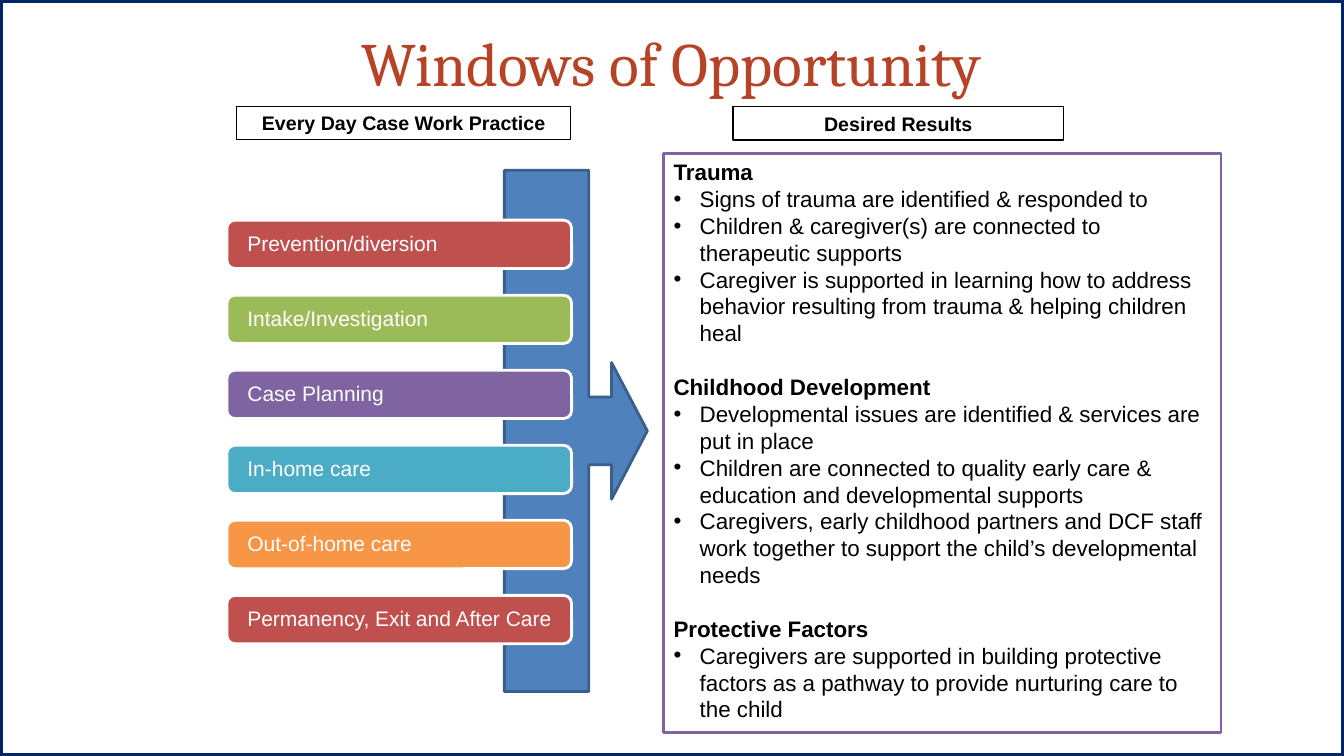
"""Build the Windows of Opportunity slide."""
from lxml import etree
from pptx import Presentation
from pptx import util as u
from pptx.dml.color import RGBColor
from pptx.enum import shapes, text
from pptx.oxml import ns

WIDTH, HEIGHT = 13.33, 7.5
COLOURS = {
    "frame": "002663", "title": "B64326", "black": "000000", "white": "FFFFFF",
    "arrow": "4F81BD", "arrow_edge": "3A5F8C", "red": "C0504D", "green": "9BBB59",
    "purple": "8064A2", "teal": "4BACC6", "orange": "F79646",
}
STAGES = [
    ("Prevention/diversion", "red"),
    ("Intake/Investigation", "green"),
    ("Case Planning", "purple"),
    ("In-home care", "teal"),
    ("Out-of-home care", "orange"),
    ("Permanency, Exit and After Care", "red"),
]
RESULTS = {
    "Trauma": [
        "Signs of trauma are identified & responded to",
        "Children & caregiver(s) are connected to therapeutic supports",
        "Caregiver is supported in learning how to address behavior resulting "
        "from trauma & helping children heal",
    ],
    "Childhood Development": [
        "Developmental issues are identified & services are put in place",
        "Children are connected to quality early care & education and "
        "developmental supports",
        "Caregivers, early childhood partners and DCF staff work together to "
        "support the child’s developmental needs",
    ],
    "Protective Factors": [
        "Caregivers are supported in building protective factors as a pathway "
        "to provide nurturing care to the child",
    ],
}


def colour(name):
    """Return the named colour."""
    return RGBColor.from_string(COLOURS[name])


def place(shape, box):
    """Move a shape to a left, top, width, height box in inches."""
    shape.left, shape.top, shape.width, shape.height = map(u.Inches, box)


def paint(shape, fill, line, weight):
    """Set the fill and outline of a shape; no fill name means hollow."""
    if fill:
        shape.fill.solid()
        shape.fill.fore_color.rgb = colour(fill)
    else:
        shape.fill.background()
    shape.line.color.rgb = colour(line)
    shape.line.width = u.Pt(weight)


def add_box(page, kind, box, fill, line, weight):
    """Add a flat preset shape."""
    shape = page.shapes.add_shape(kind, *map(u.Inches, box))
    shape.shadow.inherit = False
    paint(shape, fill, line, weight)
    return shape


def style(para, size, ink, bold=False, font="Arial", align=text.PP_ALIGN.LEFT):
    """Format a whole paragraph."""
    para.alignment = align
    para.font.size = u.Pt(size)
    para.font.name = font
    para.font.bold = bold
    para.font.color.rgb = colour(ink)


def add_title(page, box):
    """Place the slide title."""
    title = page.shapes.title
    place(title, box)
    title.text_frame.text = "Windows of Opportunity"
    title.text_frame.vertical_anchor = text.MSO_ANCHOR.MIDDLE
    style(title.text_frame.paragraphs[0], 44, "title", font="Cambria",
          align=text.PP_ALIGN.CENTER)


def add_heading(page, box, words):
    """Add an outlined column heading."""
    shape = add_box(page, shapes.MSO_SHAPE.RECTANGLE, box, "white", "black", 0.75)
    shape.text_frame.text = words
    shape.text_frame.word_wrap = True
    shape.text_frame.vertical_anchor = text.MSO_ANCHOR.MIDDLE
    style(shape.text_frame.paragraphs[0], 14, "black", True,
          align=text.PP_ALIGN.CENTER)


def add_practice(page, box):
    """Add the callout arrow and the evenly spaced stage bars over it."""
    left, top, width, height = box
    arrow_left = left + width * 0.66
    arrow = add_box(page, shapes.MSO_SHAPE.RIGHT_ARROW_CALLOUT,
                    (arrow_left, top, left + width - arrow_left, height),
                    "arrow", "arrow_edge", 2)
    for index, share in enumerate((0.473, 0.478, 0.25, 0.591)):
        arrow.adjustments[index] = share
    bar_height, pitch = 0.48, height * 0.144
    first = top + (height - pitch * (len(STAGES) - 1) - bar_height) / 2 + 0.01
    for row, (words, fill) in enumerate(STAGES):
        bar = add_box(page, shapes.MSO_SHAPE.ROUNDED_RECTANGLE,
                      (left, first + row * pitch, width * 0.82, bar_height),
                      fill, "white", 2)
        frame = bar.text_frame
        frame.text = words
        frame.word_wrap = True
        frame.vertical_anchor = text.MSO_ANCHOR.MIDDLE
        frame.margin_left, frame.margin_right = u.Inches(0.18), u.Inches(0.05)
        frame.margin_top = frame.margin_bottom = 0
        frame.paragraphs[0].line_spacing = 0.9
        style(frame.paragraphs[0], 15, "white")


def add_result_line(para, words, bullet, gap):
    """Write one heading or bulleted line of the results list."""
    para.text = words
    para.line_spacing = u.Pt(19.2)
    para.space_before, para.space_after = u.Pt(gap), u.Pt(0)
    props = para._p.get_or_add_pPr()
    props.set("marL", str(u.Inches(0.26)))
    props.set("indent", str(u.Inches(-0.26)))
    if bullet:
        etree.SubElement(props, ns.qn("a:buFont"), typeface="Arial")
        etree.SubElement(props, ns.qn("a:buChar"), char="•")
    else:
        etree.SubElement(props, ns.qn("a:buNone"))
    style(para, 16, "black", not bullet)


def add_results(page, box):
    """Fill the body placeholder with the grouped results."""
    body = page.placeholders[1]
    place(body, box)
    paint(body, "white", "purple", 2)
    frame = body.text_frame
    frame.word_wrap = True
    frame.auto_size = text.MSO_AUTO_SIZE.NONE
    frame.vertical_anchor = text.MSO_ANCHOR.TOP
    para = frame.paragraphs[0]
    for group, (heading, lines) in enumerate(RESULTS.items()):
        if group:
            para = frame.add_paragraph()
        add_result_line(para, heading, False, 19.2 if group else 0)
        for line in lines:
            add_result_line(frame.add_paragraph(), line, True, 0)


def main():
    """Build and save the deck."""
    deck = Presentation()
    deck.slide_width, deck.slide_height = u.Inches(WIDTH), u.Inches(HEIGHT)
    page = deck.slides.add_slide(deck.slide_layouts[1])
    add_box(page, shapes.MSO_SHAPE.RECTANGLE, (0, 0, WIDTH, HEIGHT),
            None, "frame", 4.5)
    add_title(page, (2, -0.08, 9.33, 1.38))
    add_heading(page, (2.35, 1.06, 3.31, 0.32), "Every Day Case Work Practice")
    add_heading(page, (7.27, 1.06, 3.28, 0.33), "Desired Results")
    add_practice(page, (2.25, 1.69, 4.17, 5.17))
    add_results(page, (6.58, 1.52, 5.53, 5.75))
    deck.save("out.pptx")


if __name__ == "__main__":
    main()
